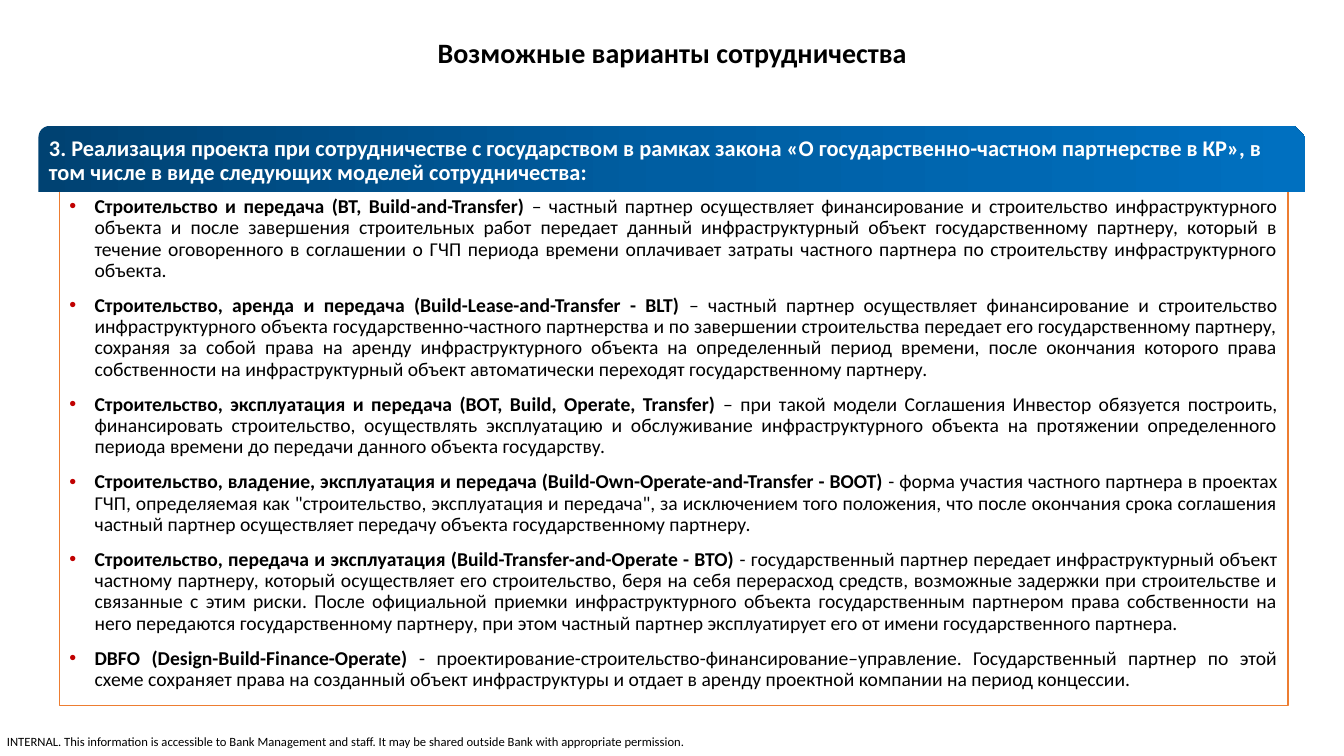
import copy

import pptx
import pptx.dml.color
import pptx.enum.shapes
import pptx.enum.text
import pptx.oxml
import pptx.oxml.ns
import pptx.util

Pt = pptx.util.Pt
ALIGN = pptx.enum.text.PP_ALIGN
ANCHOR = pptx.enum.text.MSO_ANCHOR
SHAPE = pptx.enum.shapes.MSO_SHAPE

FONT = "Calibri"
COLORS = {
    "text": "000000",
    "paper": "FFFFFF",
    "border": "ED7D31",
    "bullet": "C00000",
    "band_left": "004272",
    "band_middle": "005EA2",
    "band_right": "0070C0",
}

TITLE = "Возможные варианты сотрудничества"
HEADING = (
    "3. Реализация проекта при сотрудничестве с государством в рамках закона "
    "«О государственно-частном партнерстве в КР», в том числе в виде следующих "
    "моделей сотрудничества:"
)
FOOTER = (
    "INTERNAL. This information is accessible to Bank Management and staff. "
    "It may be shared outside Bank with appropriate permission."
)
MODELS = [
    ("Строительство и передача (BT, Build-and-Transfer) ",
     "– частный партнер осуществляет финансирование и строительство инфраструктурного "
     "объекта и после завершения строительных работ передает данный инфраструктурный "
     "объект государственному партнеру, который в течение оговоренного в соглашении о ГЧП "
     "периода времени оплачивает затраты частного партнера по строительству "
     "инфраструктурного объекта."),
    ("Строительство, аренда и передача (Build-Lease-and-Transfer - BLT)",
     " – частный партнер осуществляет финансирование и строительство инфраструктурного "
     "объекта государственно-частного партнерства и по завершении строительства передает "
     "его государственному партнеру, сохраняя за собой права на аренду инфраструктурного "
     "объекта на определенный период времени, после окончания которого права собственности "
     "на инфраструктурный объект автоматически переходят государственному партнеру."),
    ("Строительство, эксплуатация и передача (BOT, Build, Operate, Transfer) ",
     "– при такой модели Соглашения Инвестор обязуется построить, финансировать "
     "строительство, осуществлять эксплуатацию и обслуживание инфраструктурного объекта "
     "на протяжении определенного периода времени до передачи данного объекта государству."),
    ("Строительство, владение, эксплуатация и передача (Build-Own-Operate-and-Transfer - BOOT)",
     " - форма участия частного партнера в проектах ГЧП, определяемая как "
     "\"строительство, эксплуатация и передача\", за исключением того положения, что после "
     "окончания срока соглашения частный партнер осуществляет передачу объекта "
     "государственному партнеру."),
    ("Строительство, передача и эксплуатация (Build-Transfer-and-Operate - BTO)",
     " - государственный партнер передает инфраструктурный объект частному партнеру, "
     "который осуществляет его строительство, беря на себя перерасход средств, возможные "
     "задержки при строительстве и связанные с этим риски. После официальной приемки "
     "инфраструктурного объекта государственным партнером права собственности на него "
     "передаются государственному партнеру, при этом частный партнер эксплуатирует его "
     "от имени государственного партнера."),
    ("DBFO (Design-Build-Finance-Operate) ",
     "- проектирование-строительство-финансирование–управление. Государственный партнер "
     "по этой схеме сохраняет права на созданный объект инфраструктуры и отдает в аренду "
     "проектной компании на период концессии."),
]


def rgb(name):
    return pptx.dml.color.RGBColor.from_string(COLORS[name])


def add_text(p, text, size=14, bold=False, color="text"):
    r = p.add_run()
    r.text = text
    r.font.name = FONT
    r.font.size = Pt(size)
    r.font.bold = bold
    r.font.color.rgb = rgb(color)


def set_frame(tf, anchor=ANCHOR.TOP, inset_x=7.2, inset_y=3.6):
    tf.word_wrap = True
    tf.vertical_anchor = anchor
    tf.margin_left = tf.margin_right = Pt(inset_x)
    tf.margin_top = tf.margin_bottom = Pt(inset_y)


def add_bullet(p, indent):
    pPr = p._p.get_or_add_pPr()
    pPr.set("marL", str(Pt(indent)))
    pPr.set("indent", str(-Pt(indent)))
    ns = pptx.oxml.ns.nsdecls("a")
    for xml in (
        f'<a:buClr {ns}><a:srgbClr val="{COLORS["bullet"]}"/></a:buClr>',
        f'<a:buFont {ns} typeface="Arial"/>',
        f'<a:buChar {ns} char="•"/>',
    ):
        pPr.append(pptx.oxml.parse_xml(xml))


def fill_band(fill):
    """Blend three blues from left to right."""
    fill.gradient()
    fill.gradient_angle = 0
    first = fill.gradient_stops[0]._gs
    first.addnext(copy.deepcopy(first))
    names = ("band_left", "band_middle", "band_right")
    for stop, name, position in zip(fill.gradient_stops, names, (0, 0.5, 1)):
        stop.color.rgb = rgb(name)
        stop.position = position


def add_title(s, x, y, w, h):
    tf = s.shapes.add_textbox(Pt(x), Pt(y), Pt(w), Pt(h)).text_frame
    set_frame(tf, ANCHOR.MIDDLE)
    p = tf.paragraphs[0]
    p.alignment = ALIGN.CENTER
    p.line_spacing = 0.9
    add_text(p, TITLE, size=20, bold=True)


def add_models(s, x, y, w, h):
    sp = s.shapes.add_shape(SHAPE.RECTANGLE, Pt(x), Pt(y), Pt(w), Pt(h))
    sp.shadow.inherit = False
    sp.fill.solid()
    sp.fill.fore_color.rgb = rgb("paper")
    sp.line.color.rgb = rgb("border")
    sp.line.width = Pt(1)
    tf = sp.text_frame
    set_frame(tf)
    for i, (name, description) in enumerate(MODELS):
        p = tf.add_paragraph() if i else tf.paragraphs[0]
        p.alignment = ALIGN.JUSTIFY
        p.line_spacing = 0.9
        p.space_before = Pt(10)
        add_bullet(p, 18)
        add_text(p, name, bold=True)
        add_text(p, description)


def add_heading(s, x, y, w, h):
    sp = s.shapes.add_shape(SHAPE.SNIP_ROUND_RECTANGLE, Pt(x), Pt(y), Pt(w), Pt(h))
    sp.shadow.inherit = False
    sp.line.fill.background()
    fill_band(sp.fill)
    tf = s.shapes.add_textbox(Pt(x + 2.5), Pt(y + 2.5), Pt(w - 6), Pt(h - 2.5)).text_frame
    set_frame(tf, ANCHOR.MIDDLE, 5, 5)
    p = tf.paragraphs[0]
    p.line_spacing = 0.9
    add_text(p, HEADING, size=16, bold=True, color="paper")


def add_footer(s, x, y, w, h):
    tf = s.shapes.add_textbox(Pt(x), Pt(y), Pt(w), Pt(h)).text_frame
    set_frame(tf, inset_x=0, inset_y=0)
    add_text(tf.paragraphs[0], FOOTER, size=9)


def main():
    prs = pptx.Presentation()
    prs.slide_width, prs.slide_height = Pt(960), Pt(540)
    s = prs.slides.add_slide(prs.slide_layouts[6])
    add_footer(s, 5, 524, 490, 11)
    add_title(s, 288, 13.5, 384.5, 51)
    add_models(s, 42.5, 137, 877.5, 367)
    add_heading(s, 27.5, 90, 905, 47.5)
    prs.save("out.pptx")


if __name__ == "__main__":
    main()
